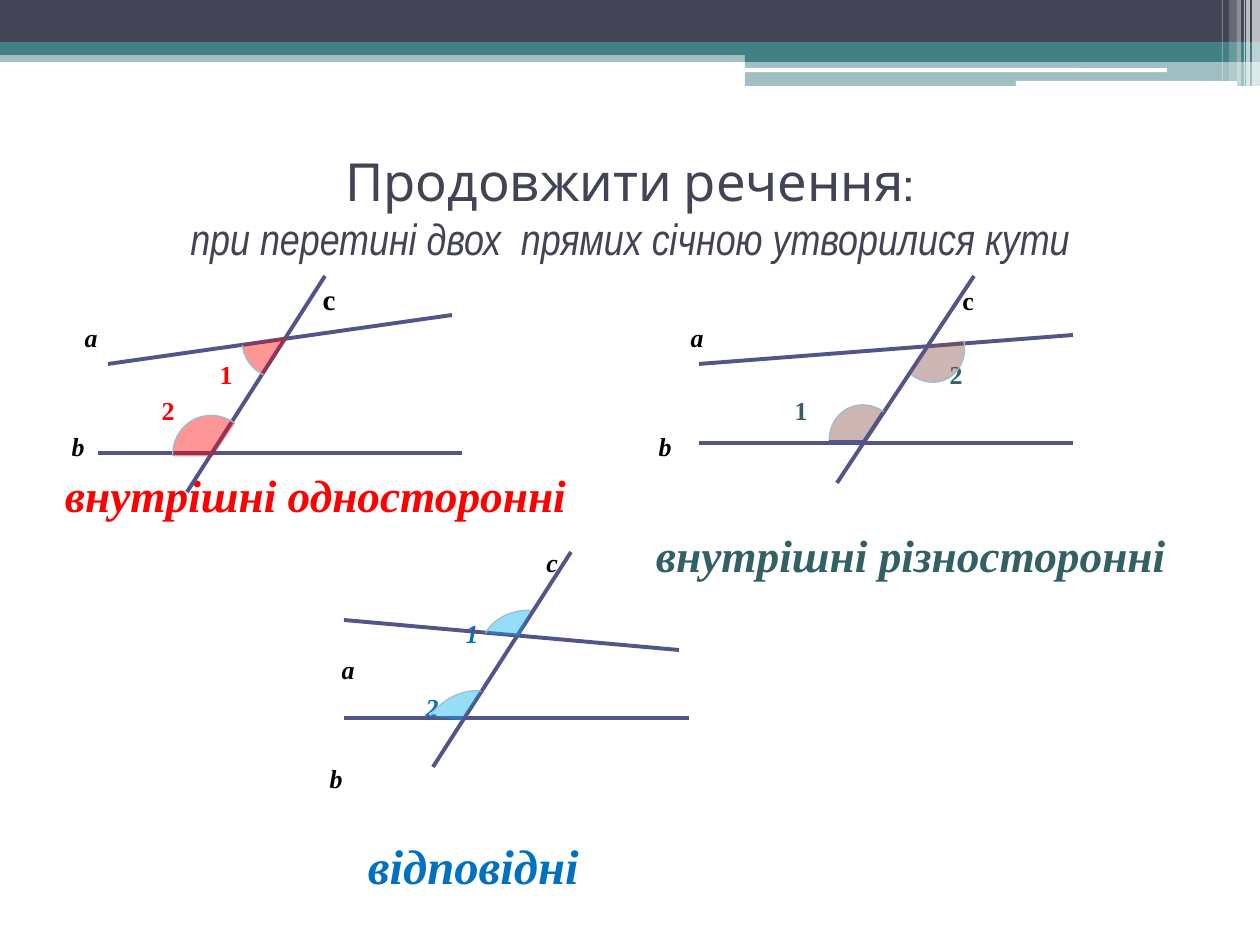
import dataclasses

import lxml.etree
import pptx
import pptx.dml.color
import pptx.enum.shapes
import pptx.enum.text
import pptx.oxml.ns
import pptx.util

PX = 914400 / 126
SHAPES = pptx.enum.shapes.MSO_SHAPE
ALIGN = pptx.enum.text.PP_ALIGN


@dataclasses.dataclass(frozen=True)
class Theme:
    dark: str = "424456"
    teal: str = "438086"
    white: str = "FFFFFF"
    black: str = "000000"
    line: str = "53548A"
    arc_edge: str = "9DBED3"
    serif: str = "Times New Roman"
    heading: str = "Cabin"
    narrow: str = "Arial Narrow"
    title_size: float = 30
    subtitle_size: float = 25
    label_size: float = 14.8
    large_label_size: float = 16.6
    caption_size: float = 25.9
    large_caption_size: float = 27.8
    line_width: float = 2.25
    thin_width: float = 0.75
    arc_opacity: int = 41


@dataclasses.dataclass(frozen=True)
class Diagram:
    box: tuple
    lines: tuple
    arcs: tuple
    labels: tuple
    caption: tuple
    color: str
    arc_fill: str
    secant_size: float
    caption_size: float
    sides: tuple = ()


THEME = Theme()

DIAGRAMS = (
    Diagram(
        box=(60, 270, 510, 260),
        lines=((48, 94, 392, 45), (38, 183, 402, 183), (265, 6, 127, 222)),
        arcs=(((111, 147, 83, 79), 245.3, 177.06, 35.3),
              ((181, 25, 94, 83), 152, 198.3, 10.35)),
        labels=(("c", 269, 29, False), ("a", 31, 67, True), ("1", 166, 104, False),
                ("2", 108, 140, False), ("b", 18, 176, True)),
        caption=("внутрішні односторонні", 5, 224),
        color="FF0000", arc_fill="FF0000",
        secant_size=THEME.large_label_size, caption_size=THEME.caption_size),
    Diagram(
        box=(650, 270, 530, 320),
        lines=((49, 94, 423, 65), (49, 173, 423, 173), (324, 6, 187, 213)),
        arcs=(((178, 136, 72, 69), 245.3, 176.17, 35.22),
              ((242, 41, 76, 68), 66.2, 171.97, 33.83)),
        labels=(("с", 318, 30, False), ("a", 47, 67, True), ("2", 306, 104, False),
                ("1", 151, 140, False), ("b", 15, 176, True)),
        caption=("внутрішні різносторонні", 6, 284),
        color="326065", arc_fill="854D47",
        secant_size=THEME.label_size, caption_size=THEME.caption_size,
        sides=((213, 171, 179, 171), (232, 142, 213, 171))),
    Diagram(
        box=(320, 540, 380, 360),
        lines=((24, 80, 359, 110), (24, 178, 369, 178), (251, 12, 113, 227)),
        arcs=(((116, 140, 50, 81), 239, 185.76, 39.35),
              ((175, 59, 49, 74), 252.5, 175.5, 24.94)),
        labels=(("с", 232, 22, True), ("1", 152, 93, True), ("а", 28, 129, True),
                ("2", 112, 167, True), ("b", 16, 238, True)),
        caption=("відповідні", 48, 325),
        color="0070C0", arc_fill="00B0F0",
        secant_size=THEME.label_size, caption_size=THEME.large_caption_size),
)


def emu(*lengths):
    """Turn pixel lengths into EMU."""
    return [round(length * PX) for length in lengths]


def rgb(color):
    """Return the colour object of a hex string."""
    return pptx.dml.color.RGBColor.from_string(color)


def add_filled(slide, preset, box, color, opacity=100):
    """Add a borderless shape with a fill of the given opacity."""
    shape = slide.shapes.add_shape(preset, *emu(*box))
    shape.shadow.inherit = False
    shape.fill.solid()
    shape.fill.fore_color.rgb = rgb(color)
    shape.line.fill.background()
    if opacity < 100:
        fill = shape._element.spPr.find(pptx.oxml.ns.qn("a:solidFill"))
        alpha = lxml.etree.SubElement(fill[0], pptx.oxml.ns.qn("a:alpha"))
        alpha.set("val", str(opacity * 1000))
    return shape


def add_line(slide, box, ends, width):
    """Add a straight line whose ends are relative to the box."""
    x1, y1, x2, y2 = ends
    left, top = box[:2]
    line = slide.shapes.add_connector(
        pptx.enum.shapes.MSO_CONNECTOR.STRAIGHT,
        *emu(left + x1, top + y1, left + x2, top + y2))
    line.line.color.rgb = rgb(THEME.line)
    line.line.width = pptx.util.Pt(width)
    lxml.etree.SubElement(line._element.spPr, pptx.oxml.ns.qn("a:effectLst"))


def add_arc(slide, box, arc, color):
    """Add a translucent angle mark relative to the box."""
    (x, y, width, height), rotation, start, end = arc
    mark = add_filled(slide, SHAPES.ARC, (box[0] + x, box[1] + y, width, height),
                      color, THEME.arc_opacity)
    mark.adjustments[0] = start
    mark.adjustments[1] = end
    mark.rotation = rotation
    mark.line.color.rgb = rgb(THEME.arc_edge)
    mark.line.width = pptx.util.Pt(THEME.thin_width)


def format_paragraph(paragraph, font_name, size, color, bold, italic, align):
    """Format the runs and alignment of one paragraph."""
    paragraph.alignment = align
    for run in paragraph.runs:
        run.font.name = font_name
        run.font.size = pptx.util.Pt(size)
        run.font.bold = bold
        run.font.italic = italic
        run.font.color.rgb = rgb(color)


def add_text(slide, box, text, size, color, italic, align):
    """Add one bold line of serif text, centred vertically in its box."""
    frame = slide.shapes.add_textbox(*emu(*box)).text_frame
    frame.margin_left = frame.margin_right = 0
    frame.margin_top = frame.margin_bottom = 0
    frame.word_wrap = True
    frame.vertical_anchor = pptx.enum.text.MSO_ANCHOR.MIDDLE
    frame.text = text
    format_paragraph(frame.paragraphs[0], THEME.serif, size, color, True, italic, align)


def add_header(slide, box):
    """Draw the layered band and its fading stripes."""
    left, top, width, height = box
    tab = 745
    bands = (((0, 50, width, 12), THEME.teal, 50),
             ((0, 0, width, 42), THEME.dark, 100),
             ((0, 42, width, 13), THEME.teal, 100),
             ((tab, 49, width - tab, 13), THEME.teal, 100),
             ((tab, 61, width - tab, 25), THEME.teal, 50))
    highlights = ((tab, 68, 422, 4), (1016, 81, 221, 5))
    stripes = ((1252, 8, height, 65), (1246, 4, height, 65), (1244, 1, height, 60),
               (1237, 4, height, 40), (1229, 8, 81, 20), (1222, 1, 81, 30))
    for (x, y, band_width, band_height), color, opacity in bands:
        add_filled(slide, SHAPES.RECTANGLE,
                   (left + x, top + y, band_width, band_height), color, opacity)
    for x, y, bar_width, bar_height in highlights:
        add_filled(slide, SHAPES.ROUNDED_RECTANGLE,
                   (left + x, top + y, bar_width, bar_height), THEME.white)
    for x, stripe_width, stripe_height, opacity in stripes:
        add_filled(slide, SHAPES.RECTANGLE,
                   (left + x, top, stripe_width, stripe_height), THEME.white, opacity)


def add_title(slide, box):
    """Place the heading and its subtitle in the title placeholder."""
    title = slide.shapes.title
    title.left, title.top, title.width, title.height = emu(*box)
    frame = title.text_frame
    frame.text = "Продовжити речення:\nпри перетині двох  прямих січною утворилися кути"
    frame.word_wrap = True
    frame.auto_size = pptx.enum.text.MSO_AUTO_SIZE.NONE
    frame.vertical_anchor = pptx.enum.text.MSO_ANCHOR.MIDDLE
    heading, subtitle = frame.paragraphs
    format_paragraph(heading, THEME.heading, THEME.title_size, THEME.dark,
                     False, False, ALIGN.CENTER)
    format_paragraph(subtitle, THEME.narrow, THEME.subtitle_size, THEME.dark,
                     False, True, ALIGN.CENTER)
    subtitle.space_before = pptx.util.Pt(0)


def add_diagram(slide, diagram):
    """Draw two lines, their secant, the marked angles and the caption."""
    left, top, width = diagram.box[:3]
    for index, (text, x, y, italic) in enumerate(diagram.labels):
        color = diagram.color if text.isdigit() else THEME.black
        size = THEME.label_size if index else diagram.secant_size
        add_text(slide, (left + x - 15, top + y - 16, 30, 32), text, size, color,
                 italic, ALIGN.CENTER)
    text, x, y = diagram.caption
    add_text(slide, (left + x, top + y - 28, width + 20, 56), text,
             diagram.caption_size, diagram.color, True, ALIGN.LEFT)
    for ends in diagram.lines:
        add_line(slide, diagram.box, ends, THEME.line_width)
    for arc in diagram.arcs:
        add_arc(slide, diagram.box, arc, diagram.arc_fill)
    for ends in diagram.sides:
        add_line(slide, diagram.box, ends, THEME.thin_width)


def main():
    """Build and save the slide."""
    deck = pptx.Presentation()
    deck.slide_width, deck.slide_height = emu(1260, 945)
    slide = deck.slides.add_slide(deck.slide_layouts[5])
    add_header(slide, (0, 0, 1260, 86))
    add_title(slide, (63, 108, 1134, 197))
    for diagram in DIAGRAMS:
        add_diagram(slide, diagram)
    deck.save("out.pptx")


if __name__ == "__main__":
    main()
